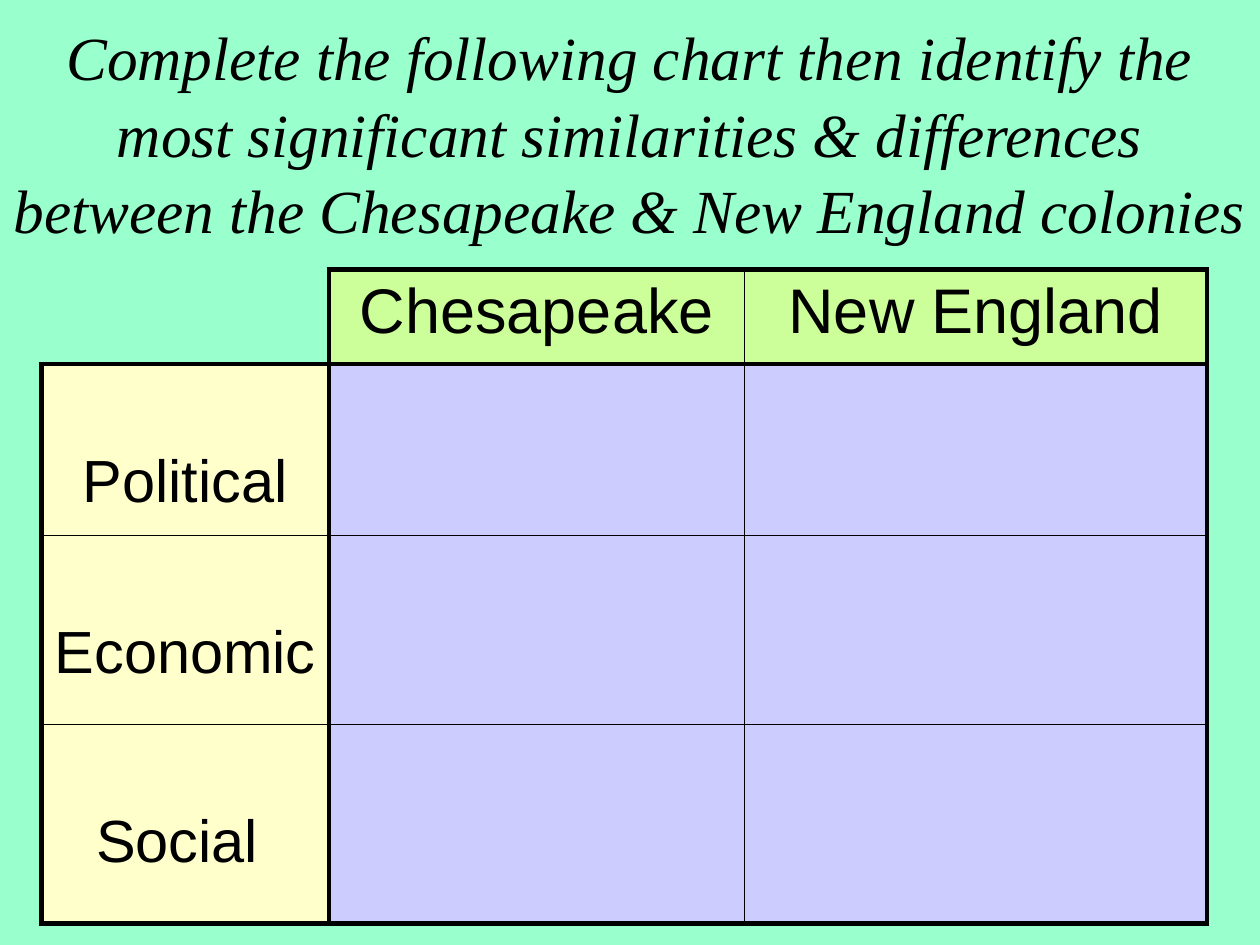
"""Build a slide with a comparison table of two colonial regions."""
from lxml.etree import SubElement
from pptx import Presentation
from pptx.dml.color import RGBColor
from pptx.enum.text import MSO_ANCHOR, MSO_AUTO_SIZE, PP_ALIGN
from pptx.oxml.ns import qn
from pptx.util import Inches, Pt

TITLE = ("Complete the following chart then identify the most significant "
         "similarities & differences between the Chesapeake & New England colonies")
ROWS = [
    ["", "Chesapeake", "New England"],
    ["Political", "", ""],
    ["Economic", "", ""],
    ["Social ", "", ""],
]
WIDTHS = [2.28, 3.3, 3.67]
HEIGHTS = [0.75, 1.36, 1.5, 1.58]
THICK_COLS = {0, 1, 3}
THICK_ROWS = {0, 1, 4}

MINT = RGBColor(0x99, 0xFF, 0xCC)
LIME = RGBColor(0xCC, 0xFF, 0x99)
CREAM = RGBColor(0xFF, 0xFF, 0xCC)
LILAC = RGBColor(0xCC, 0xCC, 0xFF)
BLACK = RGBColor(0, 0, 0)


def style(para, name, size):
    para.alignment = PP_ALIGN.CENTER
    para.font.name = name
    para.font.size = Pt(size)
    para.font.color.rgb = BLACK


def add_edge(cell, side, points):
    line = SubElement(cell._tc.get_or_add_tcPr(), qn(f"a:ln{side}"), w=str(Pt(points)))
    if points:
        fill = SubElement(line, qn("a:solidFill"))
        SubElement(fill, qn("a:srgbClr"), val=str(BLACK))
    else:
        SubElement(line, qn("a:noFill"))


def add_edges(cell, row, col):
    corner = row == col == 0
    for side, index, thick in (
        ("L", col, THICK_COLS), ("R", col + 1, THICK_COLS),
        ("T", row, THICK_ROWS), ("B", row + 1, THICK_ROWS),
    ):
        bare = corner and side in "LT"
        add_edge(cell, side, 0 if bare else 3 if index in thick else 1)


def fill_cell(cell, row, col, text):
    add_edges(cell, row, col)
    if row == col == 0:
        cell.fill.background()
    else:
        cell.fill.solid()
        cell.fill.fore_color.rgb = LIME if row == 0 else CREAM if col == 0 else LILAC
    if text:
        cell.text = text
        cell.margin_top = Inches(0.05 if row == 0 else 0.67)
        style(cell.text_frame.paragraphs[0], "Arial", 36 if row == 0 else 34)


def add_title(slide):
    title = slide.shapes.title
    title.left, title.top = Inches(0), Inches(0)
    title.width, title.height = Inches(10), Inches(2.08)
    frame = title.text_frame
    frame.text = TITLE
    frame.word_wrap = True
    frame.auto_size = MSO_AUTO_SIZE.NONE
    frame.vertical_anchor = MSO_ANCHOR.MIDDLE
    para = frame.paragraphs[0]
    style(para, "Times New Roman", 35)
    para.font.italic = True
    para.line_spacing = 1.04


def add_grid(slide):
    grid = slide.shapes.add_table(
        len(ROWS), len(WIDTHS), Inches(0.33), Inches(2.14),
        Inches(sum(WIDTHS)), Inches(sum(HEIGHTS))).table
    grid.first_row = grid.horz_banding = False
    for col, width in zip(grid.columns, WIDTHS):
        col.width = Inches(width)
    for row, height in zip(grid.rows, HEIGHTS):
        row.height = Inches(height)
    for row, texts in enumerate(ROWS):
        for col, text in enumerate(texts):
            fill_cell(grid.cell(row, col), row, col, text)


def main():
    deck = Presentation()
    deck.slide_width, deck.slide_height = Inches(10), Inches(7.5)
    slide = deck.slides.add_slide(deck.slide_layouts[5])
    slide.background.fill.solid()
    slide.background.fill.fore_color.rgb = MINT
    add_title(slide)
    add_grid(slide)
    deck.save("out.pptx")


if __name__ == "__main__":
    main()
